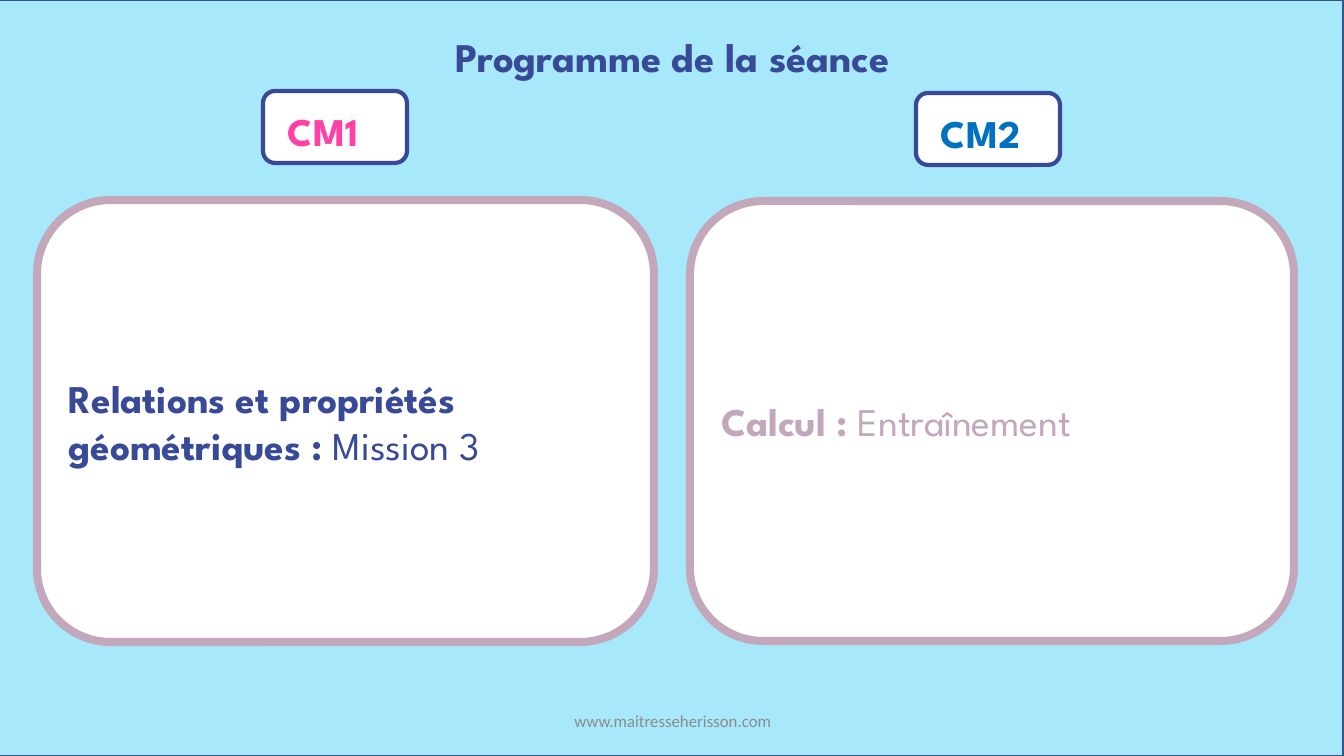
from pptx import Presentation
from pptx.dml.color import RGBColor
from pptx.enum.shapes import MSO_SHAPE
from pptx.enum.text import MSO_ANCHOR, MSO_AUTO_SIZE, PP_ALIGN
from pptx.util import Emu, Pt

TITLE = "Programme de la séance"
FOOTER = "www.maitresseherisson.com"
LEVELS = [
    {"level": "CM1", "level_color": "pink", "badge": (263, 91, 144, 72),
     "card": (37, 200, 617, 442), "text_color": "navy",
     "subject": "Relations et propriétés géométriques : ", "task": "Mission 3"},
    {"level": "CM2", "level_color": "blue", "badge": (916, 93, 144, 72),
     "card": (690, 201, 604, 440), "text_color": "mauve",
     "subject": "Calcul : ", "task": "Entraînement"},
]
BACKDROP_BOX = (-1, 0, 1344, 756)
TITLE_BOX = (1, 27, 1344, 59)
FOOTER_BOX = (446, 701, 454, 40)
LABEL_OFFSET = (15, 11)
LABEL_SIZE = (111, 57)

THEME = {
    "sky": "A7E8FB", "edge": "325491", "white": "FFFFFF", "navy": "374997",
    "mauve": "C3A7BA", "pink": "FF41A5", "blue": "0070C0", "grey": "8C8C8C",
    "font": "League Spartan", "footer_font": "Calibri",
    "title_size": 29, "body_size": 28, "footer_size": 12,
}
EMU_PER_PX = 914400 / 100.8


def px(*lengths):
    return [Emu(round(length * EMU_PER_PX)) for length in lengths]


def color(key):
    return RGBColor.from_string(THEME[key])


def apply(target, formats):
    for attribute, value in formats.items():
        setattr(target, attribute, value)


def add_panel(shapes, preset, box, fill, line, width):
    panel = shapes.add_shape(preset, *px(*box))
    panel.shadow.inherit = False
    panel.fill.solid()
    panel.fill.fore_color.rgb = color(fill)
    panel.line.color.rgb = color(line)
    panel.line.width = Pt(width)
    return panel


def write(frame, runs, ink, size="body_size", font="font",
          align=PP_ALIGN.LEFT, anchor=MSO_ANCHOR.TOP, fit=MSO_AUTO_SIZE.NONE):
    apply(frame, {"word_wrap": True, "auto_size": fit, "vertical_anchor": anchor})
    paragraph = frame.paragraphs[0]
    paragraph.alignment = align
    for words, bold in runs:
        run = paragraph.add_run()
        run.text = words
        apply(run.font, {"name": THEME[font], "size": Pt(THEME[size]), "bold": bold})
        run.font.color.rgb = color(ink)


def add_level(slide, level):
    card = add_panel(slide.shapes, MSO_SHAPE.ROUNDED_RECTANGLE, level["card"],
                     "white", "mauve", 5.75)
    write(card.text_frame, [(level["subject"], True), (level["task"], False)],
          level["text_color"], anchor=MSO_ANCHOR.MIDDLE)
    badge = slide.shapes.add_group_shape()
    add_panel(badge.shapes, MSO_SHAPE.ROUNDED_RECTANGLE, level["badge"],
              "white", "navy", 3)
    left, top = (start + gap for start, gap in zip(level["badge"], LABEL_OFFSET))
    label = badge.shapes.add_textbox(*px(left, top, *LABEL_SIZE))
    write(label.text_frame, [(level["level"], True)], level["level_color"],
          fit=MSO_AUTO_SIZE.SHAPE_TO_FIT_TEXT)


def main():
    deck = Presentation()
    deck.slide_width, deck.slide_height = px(1344, 756)
    slide = deck.slides.add_slide(deck.slide_layouts[5])
    backdrop = add_panel(slide.shapes, MSO_SHAPE.RECTANGLE, BACKDROP_BOX,
                         "sky", "edge", 1)
    title = slide.shapes.title
    backdrop._element.addnext(title._element)
    apply(title, dict(zip(("left", "top", "width", "height"), px(*TITLE_BOX))))
    write(title.text_frame, [(TITLE, True)], "navy", "title_size",
          align=PP_ALIGN.CENTER, fit=MSO_AUTO_SIZE.SHAPE_TO_FIT_TEXT)
    for level in LEVELS:
        add_level(slide, level)
    footer = slide.shapes.add_textbox(*px(*FOOTER_BOX))
    write(footer.text_frame, [(FOOTER, False)], "grey", "footer_size", "footer_font",
          PP_ALIGN.CENTER, MSO_ANCHOR.MIDDLE)
    deck.save("out.pptx")


if __name__ == "__main__":
    main()
